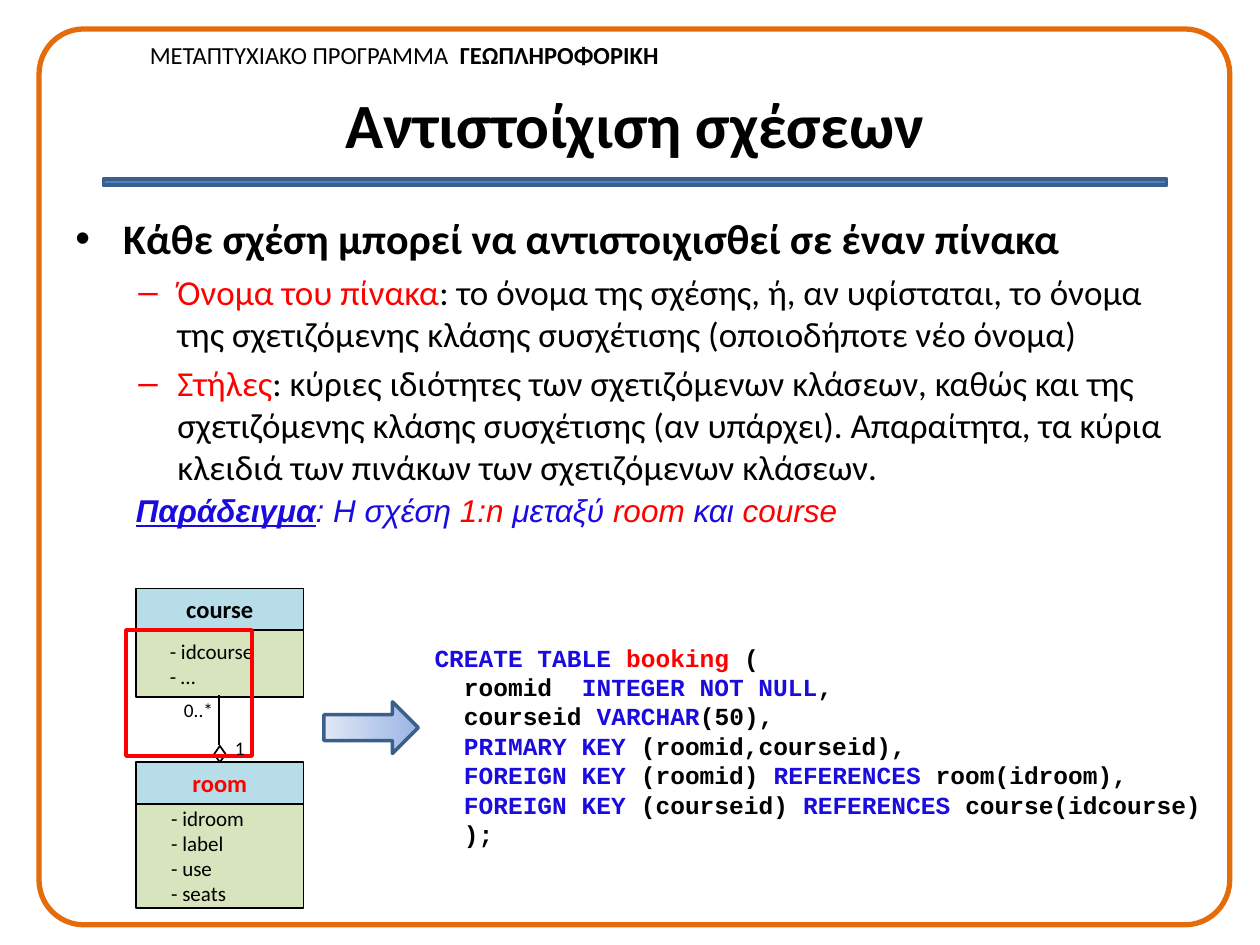
from lxml import etree
from pptx import Presentation
from pptx.dml.color import RGBColor
from pptx.enum.shapes import MSO_CONNECTOR, MSO_SHAPE
from pptx.enum.text import MSO_ANCHOR, PP_ALIGN
from pptx.oxml.ns import qn
from pptx.util import Inches, Pt

LEFT, CENTER, RIGHT = PP_ALIGN.LEFT, PP_ALIGN.CENTER, PP_ALIGN.RIGHT
TOP, MIDDLE = MSO_ANCHOR.TOP, MSO_ANCHOR.MIDDLE
RECT, ROUND = MSO_SHAPE.RECTANGLE, MSO_SHAPE.ROUNDED_RECTANGLE
ARROW, DIAMOND = MSO_SHAPE.RIGHT_ARROW, MSO_SHAPE.FLOWCHART_DECISION
STRAIGHT = MSO_CONNECTOR.STRAIGHT

BLACK, RED, BLUE = "000000", "FF0000", "1A0BDF"
STEEL, NAVY, ORANGE = "4F81BD", "3A5F8C", "E46C0A"
AQUA, GREEN = "B7DEE8", "D7E4BD"

BULLETS = [
    ("•", 0.38, 0.38, 24,
     [("Κάθε σχέση μπορεί να αντιστοιχισθεί σε έναν πίνακα", BLACK, "b")]),
    ("–", 0.81, 0.31, 20,
     [("Όνομα του πίνακα", RED),
      (": το όνομα της σχέσης, ή, αν υφίσταται, το όνομα της σχετιζόμενης "
       "κλάσης συσχέτισης (οποιοδήποτε νέο όνομα)",)]),
    ("–", 0.81, 0.31, 20,
     [("Στήλες", RED),
      (": κύριες ιδιότητες των σχετιζόμενων κλάσεων, καθώς και της "
       "σχετιζόμενης κλάσης συσχέτισης (αν υπάρχει). Απαραίτητα, τα κύρια "
       "κλειδιά των πινάκων των σχετιζόμενων κλάσεων.",)]),
]

CODE = [
    [("CREATE TABLE ", BLUE), ("booking", RED), (" (",)],
    [("  roomid  ",), ("INTEGER NOT NULL", BLUE), (",",)],
    [("  courseid ",), ("VARCHAR", BLUE), ("(50),",)],
    [("  PRIMARY KEY ", BLUE), ("(roomid,courseid),",)],
    [("  FOREIGN KEY ", BLUE), ("(roomid) ",), ("REFERENCES", BLUE),
     (" room(idroom),",)],
    [("  FOREIGN KEY ", BLUE), ("(courseid) ",), ("REFERENCES", BLUE),
     (" course(idcourse)",)],
    [("  );",)],
]

EXAMPLE = [("Παράδειγμα", BLUE, "biu"), (": Η σχέση ", BLUE), ("1:n", RED),
           (" μεταξύ ", BLUE), ("room", RED), (" και ", BLUE), ("course", RED)]

LOOP = [
    (1.35, 5.43), (1.31, 5.46), (1.27, 5.5), (1.22, 5.53), (1.17, 5.57),
    (1.13, 5.6), (1.1, 5.63), (1.08, 5.68), (1.09, 5.72), (1.14, 5.8),
    (1.18, 5.84), (1.2, 5.88), (1.23, 5.93), (1.27, 5.98), (1.31, 6.03),
    (1.37, 6.08), (1.42, 6.1), (1.47, 6.12), (1.52, 6.13), (1.59, 6.14),
    (1.67, 6.15), (1.75, 6.15), (1.82, 6.14), (1.91, 6.13), (1.99, 6.12),
    (2.05, 6.09), (2.1, 6.07), (2.15, 6.03), (2.18, 5.99), (2.22, 5.93),
    (2.25, 5.88), (2.27, 5.83), (2.28, 5.8), (2.28, 5.63), (2.27, 5.59),
    (2.25, 5.53), (2.21, 5.51), (2.16, 5.48), (2.08, 5.45), (2.02, 5.42),
    (1.93, 5.41), (1.71, 5.41), (1.52, 5.41), (1.47, 5.42), (1.41, 5.44),
]


def color(code):
    return RGBColor.from_string(code)


def write(par, runs, size=14, font="Calibri", flags="", align=LEFT):
    """Add runs of (text, colour, flags), where flags are among b, i and u."""
    par.alignment = align
    for words, *style in runs:
        tint, marks = (style + [BLACK, ""][len(style):])
        marks += flags
        run = par.add_run()
        run.text = words
        face = run.font
        face.name, face.size = font, Pt(size)
        face.color.rgb = color(tint)
        face.bold, face.italic = "b" in marks, "i" in marks
        face.underline = "u" in marks


def text(slide, box, rows, wrap=False, anchor=TOP, **style):
    frame = slide.shapes.add_textbox(*map(Inches, box)).text_frame
    frame.word_wrap = wrap
    frame.vertical_anchor = anchor
    for i, runs in enumerate(rows):
        par = frame.add_paragraph() if i else frame.paragraphs[0]
        write(par, runs, **style)


def paint(item, fill, line, width):
    item.shadow.inherit = False
    if fill:
        item.fill.solid()
        item.fill.fore_color.rgb = color(fill)
    else:
        item.fill.background()
    item.line.color.rgb = color(line)
    item.line.width = Pt(width)


def shape(slide, kind, box, fill=None, line=BLACK, width=1):
    item = slide.shapes.add_shape(kind, *map(Inches, box))
    paint(item, fill, line, width)
    return item


def bullets(slide, box):
    frame = slide.shapes.add_textbox(*map(Inches, box)).text_frame
    frame.word_wrap = True
    for i, (mark, left, hang, size, runs) in enumerate(BULLETS):
        par = frame.add_paragraph() if i else frame.paragraphs[0]
        props = par._p.get_or_add_pPr()
        props.set("marL", str(Inches(left)))
        props.set("indent", str(-Inches(hang)))
        if i:
            par.space_before = Pt(size * 0.2)
        face = etree.SubElement(props, qn("a:buFont"))
        face.set("typeface", "Arial")
        etree.SubElement(props, qn("a:buChar")).set("char", mark)
        write(par, runs, size=size)


def entity(slide, name, tint, top, height, fields, box):
    """Draw a class: a name bar over a body that lists its fields."""
    left, wide, bar = 1.08, 1.33, 0.33
    head = shape(slide, RECT, (left, top, wide, bar), AQUA)
    head.text_frame.vertical_anchor = MIDDLE
    write(head.text_frame.paragraphs[0], [(name, tint, "b")], align=CENTER)
    shape(slide, RECT, (left, top + bar, wide, height), GREEN)
    text(slide, box, [[("- " + field,)] for field in fields], size=12)


def link(slide):
    """Join the two classes with an aggregation line and its counts."""
    ends = map(Inches, (1.74, 5.52, 1.74, 5.91))
    line = slide.shapes.add_connector(STRAIGHT, *ends)
    line.line.color.rgb = color(BLACK)
    line.line.width = Pt(1)
    etree.SubElement(line._element.spPr, qn("a:effectLst"))
    shape(slide, DIAMOND, (1.7, 5.92, 0.09, 0.13))


def loop(slide):
    pen = slide.shapes.build_freeform(*LOOP[0], scale=Inches(1))
    pen.add_line_segments(LOOP[1:], close=True)
    paint(pen.convert_to_shape(), None, RED, 2)


def arrow(slide):
    item = shape(slide, ARROW, (2.57, 5.57, 0.75, 0.41), line=NAVY, width=2)
    item.fill.gradient()
    item.fill.gradient_angle = 0
    for stop, tint, place in zip(item.fill.gradient_stops,
                                 ("E1E8F5", "9AB5E4"), (0, 1)):
        stop.color.rgb = color(tint)
        stop.position = place


def main():
    deck = Presentation()
    deck.slide_width, deck.slide_height = Inches(10), Inches(7.5)
    slide = deck.slides.add_slide(deck.slide_layouts[6])

    text(slide, (1.09, 0.27, 4.28, 0.34),
         [[("ΜΕΤΑΠΤΥΧΙΑΚΟ ΠΡΟΓΡΑΜΜΑ  ",), ("ΓΕΩΠΛΗΡΟΦΟΡΙΚΗ", BLACK, "b")]])
    shape(slide, RECT, (0.82, 1.42, 8.44, 0.05), STEEL, NAVY, 2)
    border = shape(slide, ROUND, (0.31, 0.23, 9.45, 7.11), None, ORANGE, 3)
    border.adjustments[0] = 0.05
    text(slide, (0.54, 0.5, 9, 0.95), [[("Αντιστοίχιση σχέσεων",)]],
         wrap=True, anchor=MIDDLE, size=36, flags="b", align=CENTER)
    bullets(slide, (0.5, 1.64, 9, 2.19))

    entity(slide, "room", RED, 6.05, 0.83,
           ["idroom", "label", "use", "seats"], (1.26, 6.34, 0.79, 0.91))
    entity(slide, "course", BLACK, 4.67, 0.53,
           ["idcourse", "…"], (1.25, 5.02, 0.87, 0.5))
    link(slide)
    loop(slide)
    arrow(slide)
    text(slide, (3.35, 5.05, 6.48, 1.75), CODE, wrap=True,
         font="Courier New", flags="b")
    for count, box in (("1", (1.75, 5.79, 0.29, 0.29)),
                       ("0..*", (1.35, 5.49, 0.44, 0.29))):
        text(slide, box, [[(count,)]], size=11, align=RIGHT)
    text(slide, (0.98, 3.85, 5.96, 0.4), [EXAMPLE],
         size=18, font="Arial", flags="i")
    deck.save("out.pptx")


if __name__ == "__main__":
    main()
